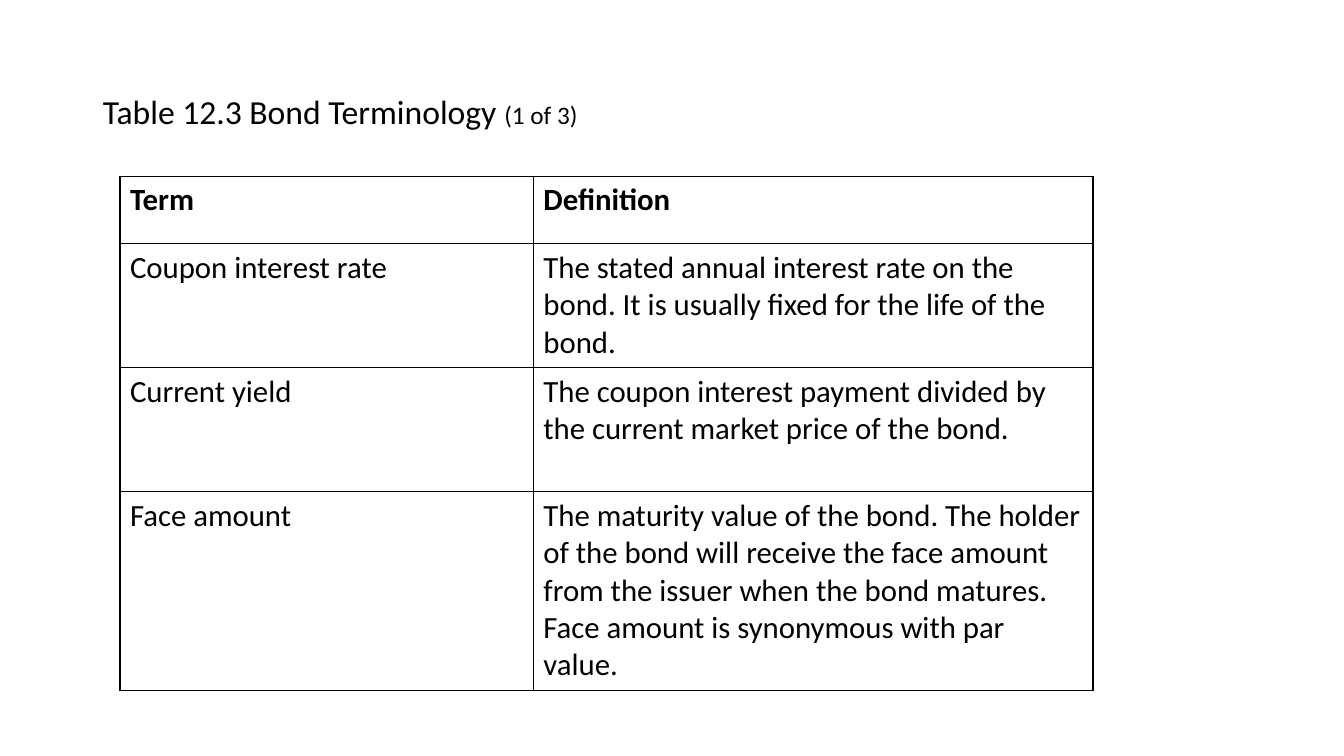
from lxml.etree import SubElement
from pptx import Presentation
from pptx.dml.color import RGBColor
from pptx.enum.text import MSO_ANCHOR, PP_ALIGN
from pptx.oxml.ns import qn
from pptx.util import Inches, Pt

FONT = "Calibri"
BLACK = "000000"
WHITE = "FFFFFF"
COL_WIDTHS = [4.1, 5.55]
ROW_HEIGHTS = [0.67, 1.23, 1.23, 1.97]
TERMS = [
    ("Term", "Definition"),
    ("Coupon interest rate",
     "The stated annual interest rate on the bond. "
     "It is usually fixed for the life of the bond."),
    ("Current yield",
     "The coupon interest payment divided by the current market price of the bond."),
    ("Face amount",
     "The maturity value of the bond. The holder of the bond will receive the "
     "face amount from the issuer when the bond matures. "
     "Face amount is synonymous with par value."),
]


def rgb(color):
    return RGBColor.from_string(color)


def format_run(r, size, bold=False):
    r.font.name = FONT
    r.font.size = Pt(size)
    r.font.bold = bold
    r.font.color.rgb = rgb(BLACK)


def add_title(s, text, counter):
    title = s.shapes.title
    title.left, title.top = Inches(0.92), Inches(0.4)
    title.width, title.height = Inches(11.5), Inches(1.45)
    tf = title.text_frame
    tf.word_wrap = True
    tf.vertical_anchor = MSO_ANCHOR.MIDDLE
    tf.text = text
    p = tf.paragraphs[0]
    p.alignment = PP_ALIGN.LEFT
    p.line_spacing = 0.9
    p.add_run().text = counter
    for r, size in zip(p.runs, (24, 18)):
        format_run(r, size)


def add_borders(cell, color, width):
    tcPr = cell._tc.get_or_add_tcPr()
    for side in ("a:lnL", "a:lnR", "a:lnT", "a:lnB"):
        ln = SubElement(tcPr, qn(side), w=str(Pt(width)))
        fill = SubElement(ln, qn("a:solidFill"))
        SubElement(fill, qn("a:srgbClr"), val=color)


def format_cell(cell, text, bold):
    cell.text_frame.text = text
    format_run(cell.text_frame.paragraphs[0].runs[0], 22, bold)
    cell.vertical_anchor = MSO_ANCHOR.TOP
    # Borders come before the fill in the cell properties
    add_borders(cell, BLACK, 1)
    cell.fill.solid()
    cell.fill.fore_color.rgb = rgb(WHITE)


def add_term_table(s, left, top):
    frame = s.shapes.add_table(
        len(TERMS), len(COL_WIDTHS), Inches(left), Inches(top),
        Inches(sum(COL_WIDTHS)), Inches(sum(ROW_HEIGHTS)))
    table = frame.table
    table.horz_banding = False
    for col, width in zip(table.columns, COL_WIDTHS):
        col.width = Inches(width)
    for row, height in zip(table.rows, ROW_HEIGHTS):
        row.height = Inches(height)
    for i, texts in enumerate(TERMS):
        for j, text in enumerate(texts):
            format_cell(table.cell(i, j), text, bold=i == 0)


def main():
    prs = Presentation()
    prs.slide_width, prs.slide_height = Inches(13.33), Inches(7.5)
    s = prs.slides.add_slide(prs.slide_layouts[5])

    # Heading
    add_title(s, "Table 12.3 Bond Terminology ", "(1 of 3)")

    # Terms and definitions
    add_term_table(s, 1.19, 1.75)

    prs.save("out.pptx")


if __name__ == "__main__":
    main()
